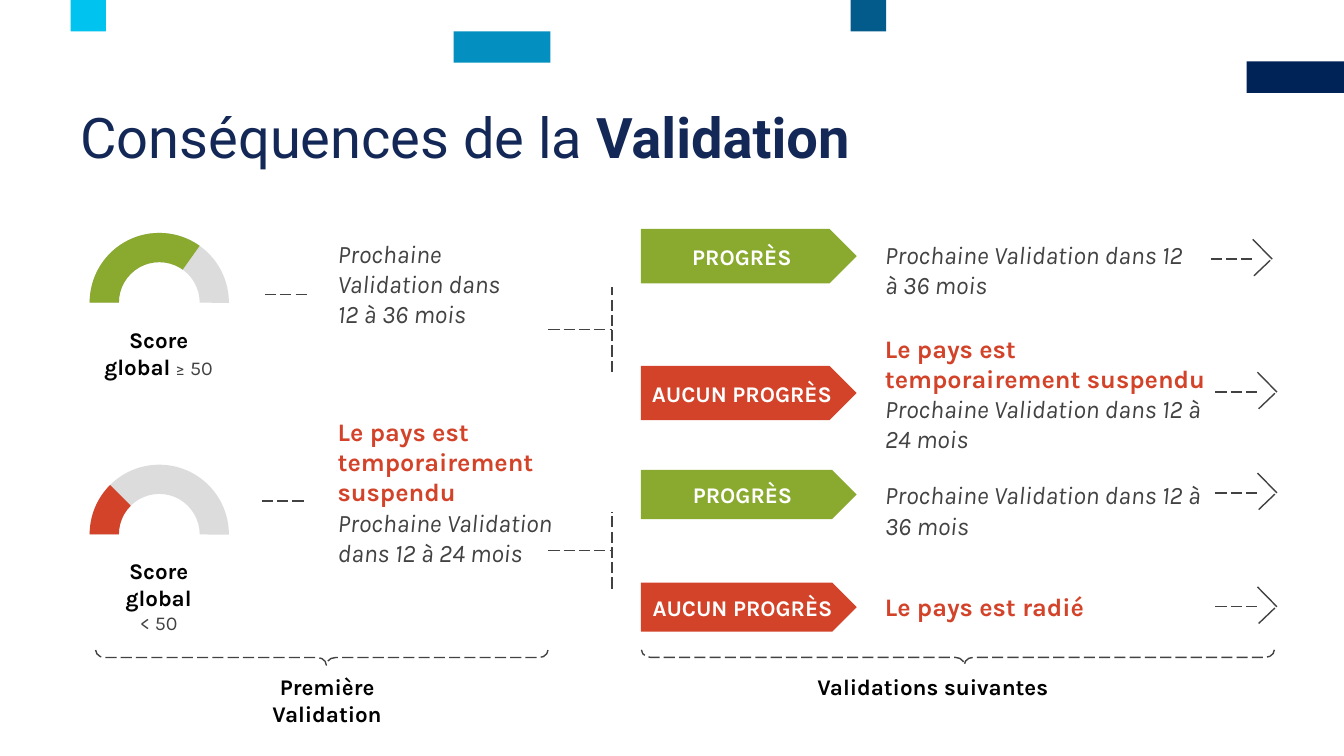
from pptx import Presentation, util as u
from pptx.dml.color import RGBColor
from pptx.enum import dml, shapes, text
from pptx.oxml.ns import qn
from lxml import etree

Cm, Pt = u.Cm, u.Pt
KIND = shapes.MSO_SHAPE
ALIGN = text.PP_ALIGN
COLOR = {
    "navy": "002357", "blue": "025B8B", "teal": "038FBF", "cyan": "00C3F0",
    "title": "132856", "grey": "DCDCDC", "green": "89AA2E", "red": "D24329",
    "ink": "424242", "black": "000100", "white": "FFFFFF",
}
# font, size, colour, bold, italic
STYLE = {
    "title": ("Roboto", 40, "title", False, False),
    "title bold": ("Roboto", 40, "title", True, False),
    "label": ("Karla", 16, "black", True, False),
    "score": ("Karla", 14, "ink", False, False),
    "plate": ("Karla", 16, "white", True, False),
    "next": ("Karla", 18, "ink", False, True),
    "alert": ("Karla", 18, "red", True, False),
}
BREAK = ("", None)

deck = Presentation()
deck.slide_width, deck.slide_height = Cm(33.87), Cm(19.05)
slide = deck.slides.add_slide(deck.slide_layouts[5])
items = slide.shapes


def write(shape, runs, align=ALIGN.LEFT, anchor=text.MSO_ANCHOR.TOP, inset=0.25):
    """Fill a shape with one paragraph of (words, style) runs."""
    frame = shape.text_frame
    frame.word_wrap = True
    frame.auto_size = text.MSO_AUTO_SIZE.NONE
    frame.vertical_anchor = anchor
    frame.margin_left = frame.margin_right = Cm(inset)
    frame.margin_top = frame.margin_bottom = Cm(0.13)
    para = frame.paragraphs[0]
    para.alignment = align
    for words, style in runs:
        if style is None:
            para.add_line_break()
            continue
        run = para.add_run()
        run.text = words
        font = run.font
        font.name, size, color, font.bold, font.italic = STYLE[style]
        font.size = Pt(size)
        font.color.rgb = RGBColor.from_string(COLOR[color])
    return para


def paint(kind, color, *place):
    """Add a filled preset shape without outline or shadow."""
    shape = items.add_shape(kind, *map(Cm, place))
    shape.shadow.inherit = False
    shape.fill.solid()
    shape.fill.fore_color.rgb = RGBColor.from_string(COLOR[color])
    shape.line.fill.background()
    return shape


# Top bars
for color, left, top, width in [
    ("navy", 31.42, 1.55, 2.46), ("blue", 21.44, 0, 0.89),
    ("teal", 11.43, 0.79, 2.44), ("cyan", 1.78, 0, 0.89),
]:
    paint(KIND.RECTANGLE, color, left, top, width, 0.79)

# Title
title = items.title
title.left, title.top, title.width, title.height = map(Cm, (1.78, 2.62, 30.3, 1.85))
para = write(title, [("Conséquences de la ", "title"), ("Validation", "title bold")],
             anchor=text.MSO_ANCHOR.MIDDLE)
para.line_spacing = 0.89

# Score gauges
for top, color, start, runs in [
    (5.87, "green", 140.74, [("Score global", "label"), (" ≥ 50", "score")]),
    (11.71, "red", 188.94, [("Score global", "label"), BREAK, ("< 50", "score")]),
]:
    for shade, angle in [("grey", 107.88), (color, start)]:
        arc = paint(KIND.BLOCK_ARC, shade, 2.26, top, 3.51, 3.51)
        for index, value in enumerate((angle, 0, 0.21)):
            arc.adjustments[index] = value
        arc._element.spPr.find(qn("a:xfrm")).set("flipH", "1")
    label = items.add_textbox(Cm(2.11), Cm(top + 2.21), Cm(3.78), Cm(1.55))
    write(label, runs, ALIGN.CENTER, inset=0.35)

# Captions under the braces
for words, left, width in [
    ("Première Validation", 5.49, 5.51), ("Validations suivantes", 19.33, 8.36),
]:
    label = items.add_textbox(Cm(left), Cm(16.84), Cm(width), Cm(0.94))
    write(label, [(words, "label")], ALIGN.CENTER)

# Outcomes
LATER = ("Prochaine Validation dans 12 à 36 mois", "next")
SOON = ("Prochaine Validation dans 12 à 24 mois", "next")
HALT = ("Le pays est temporairement suspendu", "alert")
for left, top, width, height, runs in [
    (8.26, 5.87, 5.13, 3.33, [LATER]),
    (8.26, 10.36, 6.35, 4.11, [HALT, BREAK, SOON]),
    (22.05, 5.89, 8.05, 1.8, [LATER]),
    (22.05, 8.26, 8.66, 3.33, [HALT, BREAK, SOON]),
    (22.05, 11.96, 8.66, 1.8, [LATER]),
    (22.05, 14.78, 8.66, 1.02, [("Le pays est radié", "alert")]),
]:
    write(items.add_textbox(*map(Cm, (left, top, width, height))), runs)

# Progress plates
for words, color, top, height in [
    ("PROGRÈS", "green", 5.77, 1.37), ("AUCUN PROGRÈS", "red", 9.22, 1.37),
    ("PROGRÈS", "green", 11.84, 1.24), ("AUCUN PROGRÈS", "red", 14.68, 1.24),
]:
    plate = paint(KIND.PENTAGON, color, 16.15, top, 5.44, height)
    write(plate, [(words, "plate")], ALIGN.CENTER, text.MSO_ANCHOR.MIDDLE, 0.2)

# Lines: start, end, dashed
lines = [
    (6.68, 7.42, 7.8, 7.42, True), (6.6, 12.62, 7.72, 12.62, True),
    (13.82, 8.31, 15.42, 8.31, True), (15.42, 9.37, 15.42, 7.24, True),
    (13.82, 13.87, 15.42, 13.87, True), (15.42, 14.83, 15.42, 12.9, True),
]
for x, y in [(30.51, 6.53), (30.63, 9.88), (30.63, 12.42), (30.63, 15.29)]:
    lines += [
        (x, y, x + 1.12, y, True),
        (x + 1.09, y + 0.42, x + 1.5, y + 0.03, False),
        (x + 1.06, y - 0.5, x + 1.55, y, False),
    ]
strokes = []
for *ends, dashed in lines:
    line = items.add_connector(shapes.MSO_CONNECTOR.STRAIGHT, *map(Cm, ends))
    etree.SubElement(line._element.spPr, qn("a:effectLst"))
    strokes.append((line, dashed))

# Braces
for left, top, height in [(7.92, 10.87, 11.4), (23.95, 8.59, 15.95)]:
    brace = items.add_shape(KIND.RIGHT_BRACE, *map(Cm, (left, top, 0.38, height)))
    brace.rotation = 90
    brace.adjustments[0], brace.adjustments[1] = 0.6, 0.49
    brace.shadow.inherit = False
    brace.fill.background()
    strokes.append((brace, True))

for stroke, dashed in strokes:
    stroke.line.color.rgb = RGBColor.from_string(COLOR["ink"])
    stroke.line.width = Pt(1)
    if dashed:
        stroke.line.dash_style = dml.MSO_LINE.LONG_DASH

deck.save("out.pptx")
